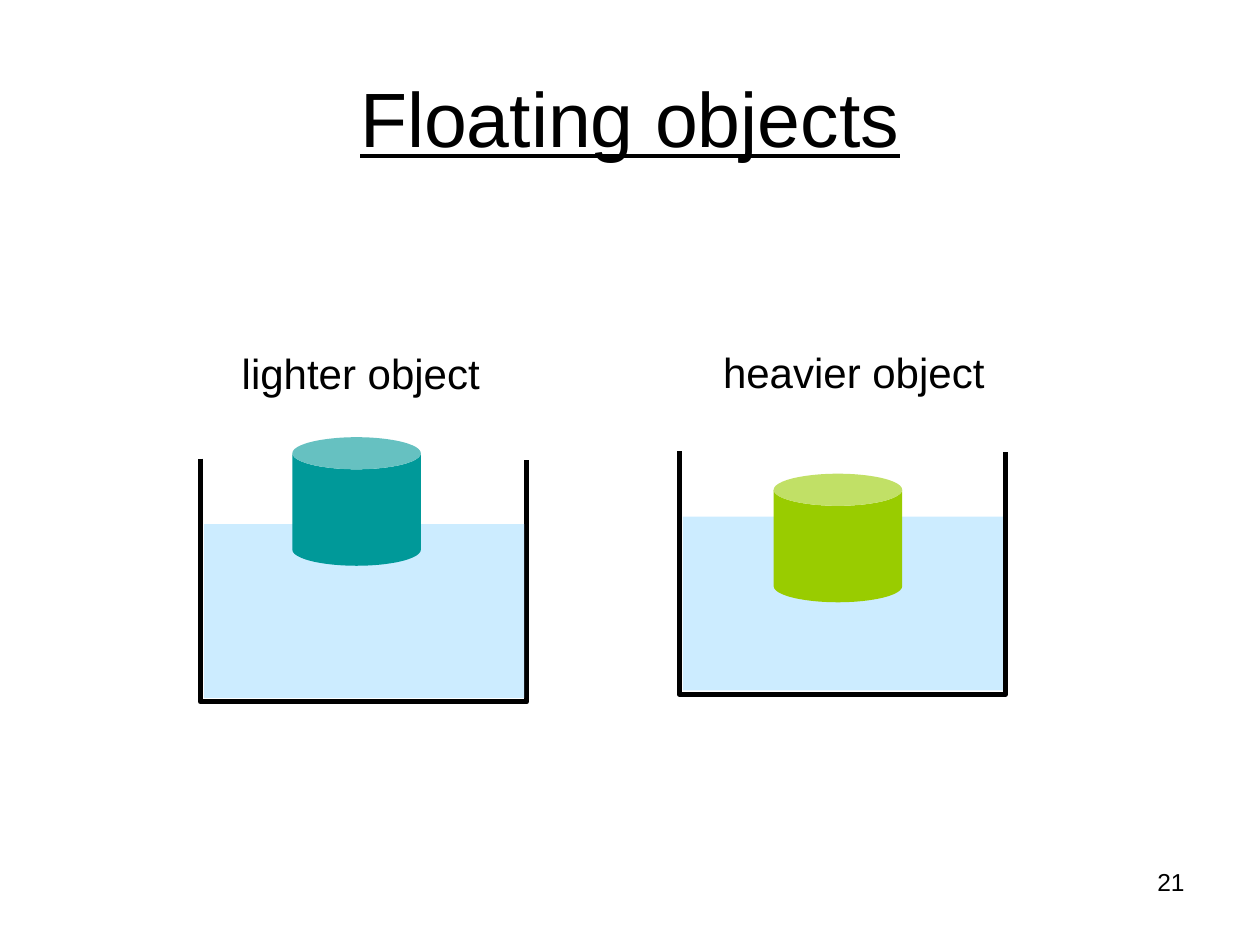
from pptx import Presentation
from pptx.dml.color import RGBColor
from pptx.enum import shapes, text
from pptx.oxml.ns import qn
from pptx.util import Inches, Pt
from lxml import etree

BLACK = RGBColor(0x00, 0x00, 0x00)
WATER = RGBColor(0xCC, 0xEC, 0xFF)
TEAL = RGBColor(0x00, 0x99, 0x99)
GREEN = RGBColor(0x99, 0xCC, 0x00)

TANK_W, TANK_H = 2.59, 1.93
CAN_SIZE = 1.02


def add_text(slide, box, words, size, align=text.PP_ALIGN.LEFT,
             anchor=text.MSO_ANCHOR.TOP, wrap=True, **font):
    sp = slide.shapes.add_textbox(*map(Inches, box))
    tf = sp.text_frame
    tf.word_wrap = wrap
    tf.vertical_anchor = anchor
    p = tf.paragraphs[0]
    p.alignment = align
    r = p.add_run()
    r.text = words
    r.font.color.rgb = BLACK
    for name, value in {"name": "Arial", "size": Pt(size), **font}.items():
        setattr(r.font, name, value)


def add_solid(slide, kind, box, color):
    """Add a preset shape with a plain fill and no outline."""
    sp = slide.shapes.add_shape(kind, *map(Inches, box))
    sp.shadow.inherit = False
    sp.fill.solid()
    sp.fill.fore_color.rgb = color
    sp.line.fill.background()
    return sp


def add_walls(slide, left, top):
    """Draw the open-topped outline of a tank with rounded corners."""
    right, bottom = left + TANK_W, top + TANK_H
    points = [(left, bottom), (right, bottom), (right, top + 0.01)]
    builder = slide.shapes.build_freeform(Inches(left), Inches(top))
    builder.add_line_segments([(Inches(x), Inches(y)) for x, y in points], close=False)
    sp = builder.convert_to_shape()
    sp.shadow.inherit = False
    sp.fill.background()
    sp.line.color.rgb = BLACK
    sp.line.width = Pt(3)
    etree.SubElement(sp.line._get_or_add_ln(), qn("a:round"))


def add_tank(slide, left, top, can_left, can_top, color):
    """Draw a tank of water with a can floating in it."""
    add_walls(slide, left, top)
    add_solid(slide, shapes.MSO_SHAPE.RECTANGLE,
              (left + 0.03, top + 0.52, 2.54, 1.38), WATER)
    can = add_solid(slide, shapes.MSO_SHAPE.CAN,
                    (can_left, can_top, CAN_SIZE, CAN_SIZE), color)
    can.adjustments[0] = 0.25


def main():
    prs = Presentation()
    prs.slide_width, prs.slide_height = Inches(10), Inches(7.5)
    slide = prs.slides.add_slide(prs.slide_layouts[6])

    add_text(slide, (0.5, 0.3, 9, 1.25), "Floating objects", 44,
             text.PP_ALIGN.CENTER, text.MSO_ANCHOR.MIDDLE, underline=True)
    add_tank(slide, 1.59, 3.64, 2.32, 3.47, TEAL)
    add_tank(slide, 5.39, 3.58, 6.14, 3.76, GREEN)
    add_text(slide, (1.82, 2.71, 2.09, 0.5), "lighter object", 24, wrap=False)
    add_text(slide, (5.64, 2.7, 2.28, 0.5), "heavier object", 24, wrap=False)
    add_text(slide, (7.17, 6.83, 2.33, 0.52), "21", 14, text.PP_ALIGN.RIGHT)

    prs.save("out.pptx")


if __name__ == "__main__":
    main()
